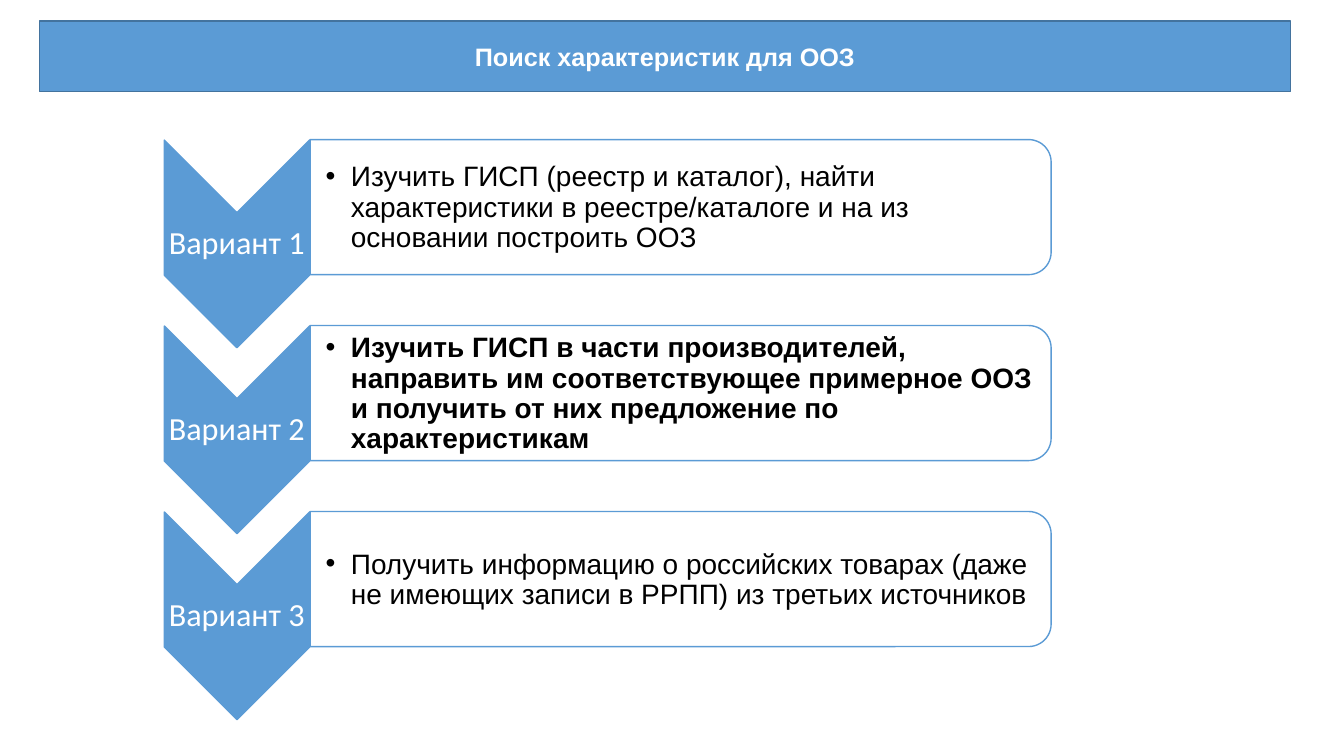
from lxml import etree
from pptx import Presentation
from pptx import util as u
from pptx.dml.color import RGBColor
from pptx.enum import shapes, text
from pptx.oxml.ns import qn

VARIANTS = [
    ("Вариант 1", "Изучить ГИСП (реестр и каталог), найти характеристики "
     "в реестре/каталоге и на из основании построить ООЗ", False),
    ("Вариант 2", "Изучить ГИСП в части производителей, направить им "
     "соответствующее примерное ООЗ и получить от них предложение по "
     "характеристикам", True),
    ("Вариант 3", "Получить информацию о российских товарах (даже не имеющих "
     "записи в РРПП) из третьих источников", False),
]
ROW_STEP = 1.845


def color(value):
    return RGBColor.from_string(value)


def write(frame, words, *, size, font, ink, bold=False, align=None,
          spacing=None, margins=None, bullet_indent=None):
    """Fill a text frame with one formatted, vertically centred paragraph."""
    frame.word_wrap = True
    frame.auto_size = text.MSO_AUTO_SIZE.NONE
    frame.vertical_anchor = text.MSO_ANCHOR.MIDDLE
    if margins:
        (frame.margin_left, frame.margin_top,
         frame.margin_right, frame.margin_bottom) = map(u.Inches, margins)
    para = frame.paragraphs[0]
    para.alignment = align
    para.line_spacing = spacing
    span = para.add_run()
    span.text = words
    span.font.size = u.Pt(size)
    span.font.name = font
    span.font.bold = bold
    span.font.color.rgb = color(ink)
    if bullet_indent:
        props = para._p.get_or_add_pPr()
        props.set("marL", str(u.Inches(bullet_indent)))
        props.set("indent", str(-u.Inches(bullet_indent)))
        etree.SubElement(props, qn("a:buFont")).set("typeface", "Arial")
        etree.SubElement(props, qn("a:buChar")).set("char", "•")


class VariantSlide:
    accent, edge, paper, ink = "5B9BD5", "43739E", "FFFFFF", "000000"
    heading_font, label_font = "Arial", "Calibri"

    def __init__(self, deck):
        self.page = deck.slides.add_slide(deck.slide_layouts[5])

    def paint(self, shape, fill, line):
        shape.fill.solid()
        shape.fill.fore_color.rgb = color(fill)
        shape.line.color.rgb = color(line)
        shape.line.width = u.Pt(1)

    def title(self, words, left, top, width, height):
        banner = self.page.shapes.title
        banner.left, banner.top = u.Inches(left), u.Inches(top)
        banner.width, banner.height = u.Inches(width), u.Inches(height)
        self.paint(banner, self.accent, self.edge)
        write(banner.text_frame, words, size=18, font=self.heading_font,
              ink=self.paper, bold=True, align=text.PP_ALIGN.CENTER)

    def turned_shape(self, kind, fill, left, top, width, height):
        """Add a preset shape rotated a quarter turn clockwise."""
        shape = self.page.shapes.add_shape(
            kind, *map(u.Inches, (left, top, width, height)))
        shape.rotation = 90
        shape.shadow.inherit = False
        self.paint(shape, fill, self.accent)

    def text_box(self, words, left, top, width, height, **style):
        box = self.page.shapes.add_textbox(
            *map(u.Inches, (left, top, width, height)))
        write(box.text_frame, words, **style)

    def variant(self, offset, label, advice, bold):
        """Add one row: a chevron with its label and a panel with its advice."""
        self.turned_shape(shapes.MSO_SHAPE.CHEVRON, self.accent,
                          1.32, 1.7 + offset, 2.06, 1.44)
        self.text_box(label, 1.63, 2.11 + offset, 1.44, 0.62,
                      size=23, font=self.label_font, ink=self.paper,
                      align=text.PP_ALIGN.CENTER, spacing=0.9,
                      margins=(0.02, 0.02, 0.02, 0.02))
        self.turned_shape(shapes.MSO_SHAPE.ROUND_2_SAME_RECTANGLE, self.paper,
                          6.08, -1.62 + offset, 1.34, 7.35)
        self.text_box(advice, 3.07, 1.46 + offset, 7.29, 1.21,
                      size=20, font=self.heading_font, ink=self.ink, bold=bold,
                      spacing=0.9, margins=(0.16, 0.01, 0.01, 0.01),
                      bullet_indent=0.25)


def main():
    deck = Presentation()
    deck.slide_width, deck.slide_height = u.Inches(13.33), u.Inches(7.5)
    slide = VariantSlide(deck)
    slide.title("Поиск характеристик для ООЗ", 0.39, 0.21, 12.41, 0.7)
    for row, (label, advice, bold) in enumerate(VARIANTS):
        slide.variant(row * ROW_STEP, label, advice, bold)
    deck.save("out.pptx")


if __name__ == "__main__":
    main()
